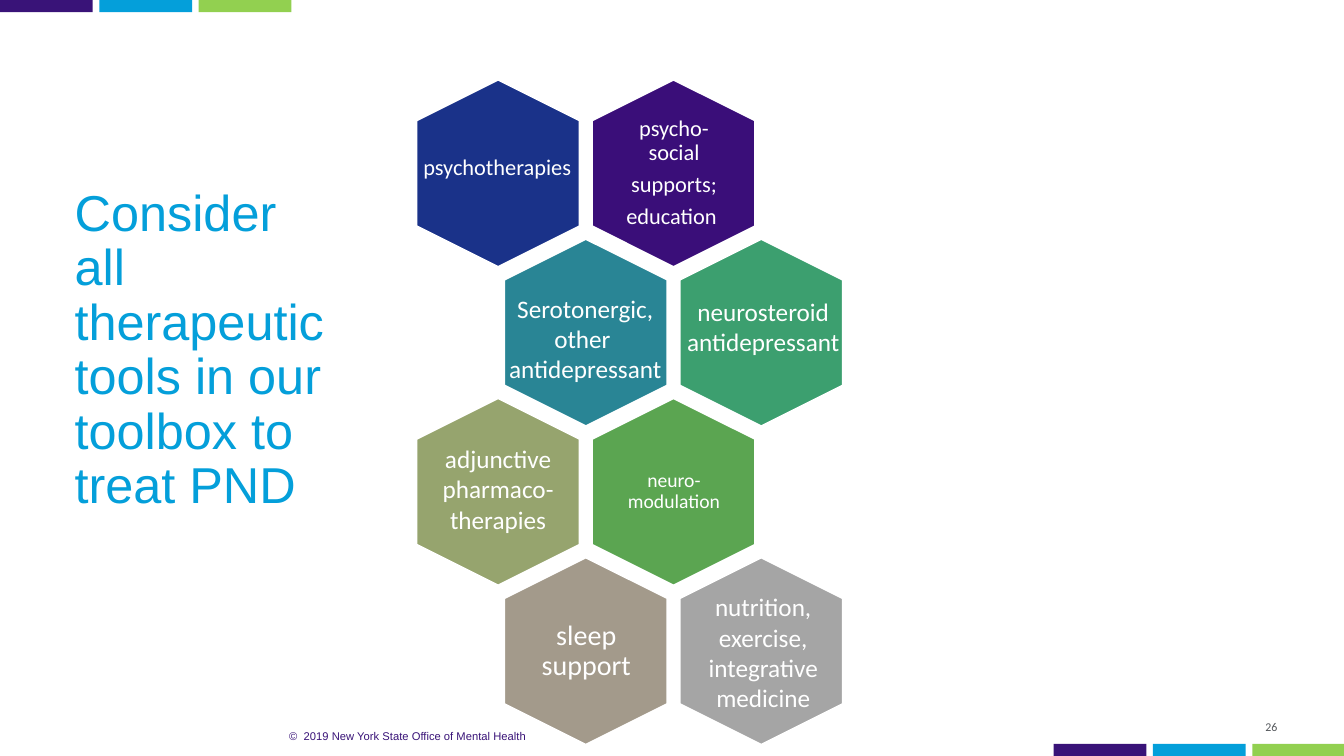
from pptx import Presentation
from pptx.dml.color import RGBColor as Rgb
from pptx.enum.shapes import MSO_SHAPE as Shape
from pptx.enum.text import MSO_ANCHOR as Anchor, MSO_AUTO_SIZE as Fit, PP_ALIGN as Align
from pptx.util import Inches, Pt

HUES = {
    "violet": "391378", "sky": "049FDA", "lime": "92D050", "slate": "53565A",
    "white": "FFFFFF", "navy": "1A3289", "plum": "3A0E79", "teal": "298595",
    "jade": "3C9F6F", "olive": "96A46E", "green": "5BA551", "taupe": "A39A8B",
    "gray": "A5A5A5",
}
STRIPES = ("violet", "sky", "lime")
ROWS = (("navy", "plum"), ("teal", "jade"), ("olive", "green"), ("taupe", "gray"))
WIDE, TALL = 1.86, 1.62
STEP, DROP = 1.74, 1.58


class Deck:
    """Hold the style and the current slide, and draw each kind of element."""

    def __init__(self):
        self.show = Presentation()
        self.show.slide_width, self.show.slide_height = Inches(13.33), Inches(7.5)
        self.slide = self.show.slides.add_slide(self.show.slide_layouts[5])

    def solid(self, kind, at, hue):
        shape = self.slide.shapes.add_shape(kind, *map(Inches, at))
        shape.shadow.inherit = False
        shape.fill.solid()
        shape.fill.fore_color.rgb = Rgb.from_string(HUES[hue])
        return shape

    def bar(self, left, top, hue):
        self.solid(Shape.RECTANGLE, (left, top, 0.92, 0.12), hue).line.fill.background()

    def hexagon(self, left, top, hue):
        cell = self.solid(Shape.HEXAGON, (left, top, WIDE, TALL), hue)
        cell.adjustments[0] = 0.25
        cell.rotation = 90
        cell.line.color.rgb = Rgb.from_string(HUES["white"])
        cell.line.width = Pt(1.5)

    def fill(self, frame, lines, size, hue="white", font="Calibri",
             align=Align.CENTER, space=1, after=0):
        for spot, line in enumerate(lines):
            para = frame.add_paragraph() if spot else frame.paragraphs[0]
            para.alignment, para.line_spacing = align, space
            para.space_before, para.space_after = Pt(0), Pt(after)
            run = para.add_run()
            run.text = line
            run.font.size, run.font.name = Pt(size), font
            run.font.color.rgb = Rgb.from_string(HUES[hue])

    def title(self, at, text):
        box = self.slide.shapes.title
        box.left, box.top, box.width, box.height = map(Inches, at)
        frame = box.text_frame
        frame.word_wrap, frame.auto_size = True, Fit.NONE
        frame.vertical_anchor = Anchor.MIDDLE
        self.fill(frame, [text], 36, "sky", "Arial", Align.LEFT, 0.9)

    def label(self, at, lines, size, anchor=Anchor.TOP, inset=None, wrap=True, **look):
        frame = self.slide.shapes.add_textbox(*map(Inches, at)).text_frame
        frame.word_wrap, frame.vertical_anchor = wrap, anchor
        if inset is not None:
            frame.margin_left = frame.margin_right = Inches(inset)
            frame.margin_top = frame.margin_bottom = Inches(inset)
        self.fill(frame, lines, size, **look)

    def inner(self, left, top, lines, size, inset):
        self.label((left + 0.38, top + 0.17, 1.11, 1.28), lines, size,
                   Anchor.MIDDLE, inset, space=0.9, after=size * 0.35)


def place(row, col):
    """Return the left and top of a honeycomb cell."""
    return 4.01 + STEP * (col + row % 2 / 2), 0.91 + DROP * row


def main():
    """Build the slide and save it."""
    deck = Deck()
    for left, top in ((0, 0), (10.45, 7.38)):
        for spot, hue in enumerate(STRIPES):
            deck.bar(left + 0.985 * spot, top, hue)
    deck.label((1.81, 7.1, 4.47, 0.4), ["©  2019 New York State Office of Mental Health"],
               8, Anchor.MIDDLE, hue="violet", font="Arial")
    deck.title((0.64, 2.67, 2.81, 1.63),
               "Consider all therapeutic tools in our toolbox to treat PND")
    deck.label((11.59, 6.97, 1.08, 0.31), ["26"], 8.5, Anchor.BOTTOM, 0,
               hue="slate", align=Align.RIGHT)

    for row, pair in enumerate(ROWS):
        for col, hue in enumerate(pair):
            deck.hexagon(*place(row, col), hue)

    deck.inner(*place(0, 1), ["psycho-social", "supports;", "education "], 16, 0.07)
    deck.inner(*place(2, 1), ["neuro-modulation"], 14, 0.06)
    deck.inner(*place(3, 0), ["sleep support"], 20, 0.08)
    deck.label((4.1, 1.47, 1.8, 0.37), ["psychotherapies"], 16, align=Align.LEFT)
    deck.label((6.67, 2.89, 1.8, 0.71), ["neurosteroid", "antidepressant"], 18)
    deck.label((4.04, 4.35, 1.8, 1.01), ["adjunctive pharmaco-therapies"], 18)
    deck.label((6.67, 5.82, 1.8, 1.31),
               ["nutrition,", "exercise,", "integrative medicine"], 18)
    deck.label((4.94, 2.86, 1.73, 1.01),
               ["Serotonergic,", "other ", "antidepressant"], 18, wrap=False)
    deck.show.save("out.pptx")


if __name__ == "__main__":
    main()
